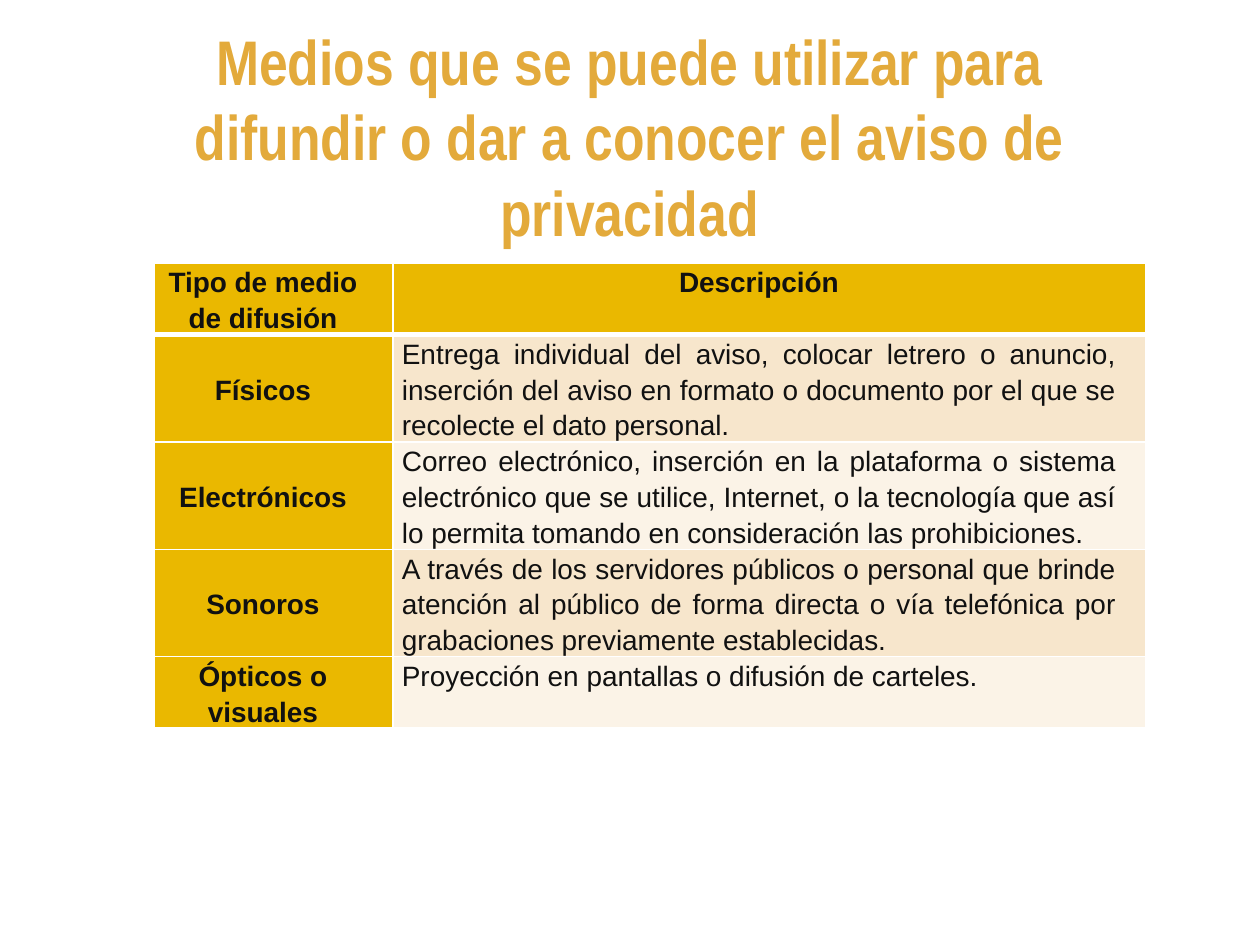
from lxml import etree
from pptx import Presentation
from pptx import util as u
from pptx.dml.color import RGBColor
from pptx.enum import text
from pptx.oxml.ns import qn

SCALE = 914400 / 126  # EMU per px
COLORS = {
    "title": "E3AA3B",
    "ink": "111111",
    "gold": "EAB800",
    "band_dark": "F7E6CC",
    "band_light": "FBF3E7",
    "border": "FFFFFF",
}
HEADER = ("Tipo de medio de difusión", "Descripción")
MEDIA = [
    ("Físicos", "Entrega individual del aviso, colocar letrero o anuncio, inserción "
     "del aviso en formato o documento por el que se recolecte el dato personal."),
    ("Electrónicos", "Correo electrónico, inserción en la plataforma o sistema "
     "electrónico que se utilice, Internet, o la tecnología que así lo permita "
     "tomando en consideración las prohibiciones."),
    ("Sonoros", "A través de los servidores públicos o personal que brinde atención al "
     "público de forma directa o vía telefónica por grabaciones previamente "
     "establecidas."),
    ("Ópticos o visuales", "Proyección en pantallas o difusión de carteles."),
]


def px(length):
    return u.Emu(round(length * SCALE))


def color(name):
    return RGBColor.from_string(COLORS[name])


class SlideBuilder:
    def __init__(self, slide):
        self.slide = slide

    def format_text(self, paragraph, font, size, ink, bold, align):
        paragraph.alignment = align
        for span in paragraph.runs:
            span.font.name = font
            span.font.size = u.Pt(size)
            span.font.bold = bold
            span.font.color.rgb = color(ink)

    def title(self, words, left, top, width, height):
        box = self.slide.shapes.title
        box.left, box.top, box.width, box.height = map(px, (left, top, width, height))
        frame = box.text_frame
        frame.text = words
        frame.word_wrap = True
        frame.auto_size = text.MSO_AUTO_SIZE.NONE
        frame.vertical_anchor = text.MSO_ANCHOR.TOP
        self.format_text(frame.paragraphs[0], "Arial Narrow", 36, "title", True,
                         text.PP_ALIGN.CENTER)

    def borders(self, cell, widths):
        properties = cell._tc.get_or_add_tcPr()
        for side, width in widths.items():
            line = etree.SubElement(properties, qn(f"a:ln{side}"), w=str(u.Pt(width)))
            fill = etree.SubElement(line, qn("a:solidFill"))
            etree.SubElement(fill, qn("a:srgbClr"), val=COLORS["border"])

    def cell(self, cell, words, fill, bold, align, anchor, widths):
        self.borders(cell, widths)
        cell.fill.solid()
        cell.fill.fore_color.rgb = color(fill)
        cell.margin_left, cell.margin_right = px(9), px(30)
        cell.margin_top = cell.margin_bottom = 0
        cell.vertical_anchor = anchor
        cell.text_frame.text = words
        paragraph = cell.text_frame.paragraphs[0]
        paragraph.line_spacing = 1.15
        self.format_text(paragraph, "Arial", 16, "ink", bold, align)

    def table(self, rows, left, top, columns, heights):
        table = self.slide.shapes.add_table(
            len(rows), len(columns), px(left), px(top),
            px(sum(columns)), px(sum(heights))).table
        for column, width in zip(table.columns, columns):
            column.width = px(width)
        for row, height in zip(table.rows, heights):
            row.height = px(height)
        for r, row in enumerate(rows):
            # The rule under the header is thicker than the others
            widths = {"L": 1, "R": 1, "T": 3 if r == 1 else 1, "B": 3 if r == 0 else 1}
            band = "band_dark" if r % 2 else "band_light"
            for c, words in enumerate(row):
                label = r == 0 or c == 0
                self.cell(
                    table.cell(r, c), words, "gold" if label else band, label,
                    text.PP_ALIGN.CENTER if label else text.PP_ALIGN.JUSTIFY,
                    text.MSO_ANCHOR.TOP if c else text.MSO_ANCHOR.MIDDLE, widths)


def main():
    deck = Presentation()
    deck.slide_width, deck.slide_height = u.Inches(10), u.Inches(7.5)
    page = SlideBuilder(deck.slides.add_slide(deck.slide_layouts[5]))

    # Table of media
    page.table([HEADER, *MEDIA], 154, 263, [239, 753], [71, 107, 107, 107, 71])

    # Title
    page.title("Medios que se puede utilizar para difundir o dar a conocer "
               "el aviso de privacidad", 131, 16, 997, 242)

    deck.save("out.pptx")


if __name__ == "__main__":
    main()
